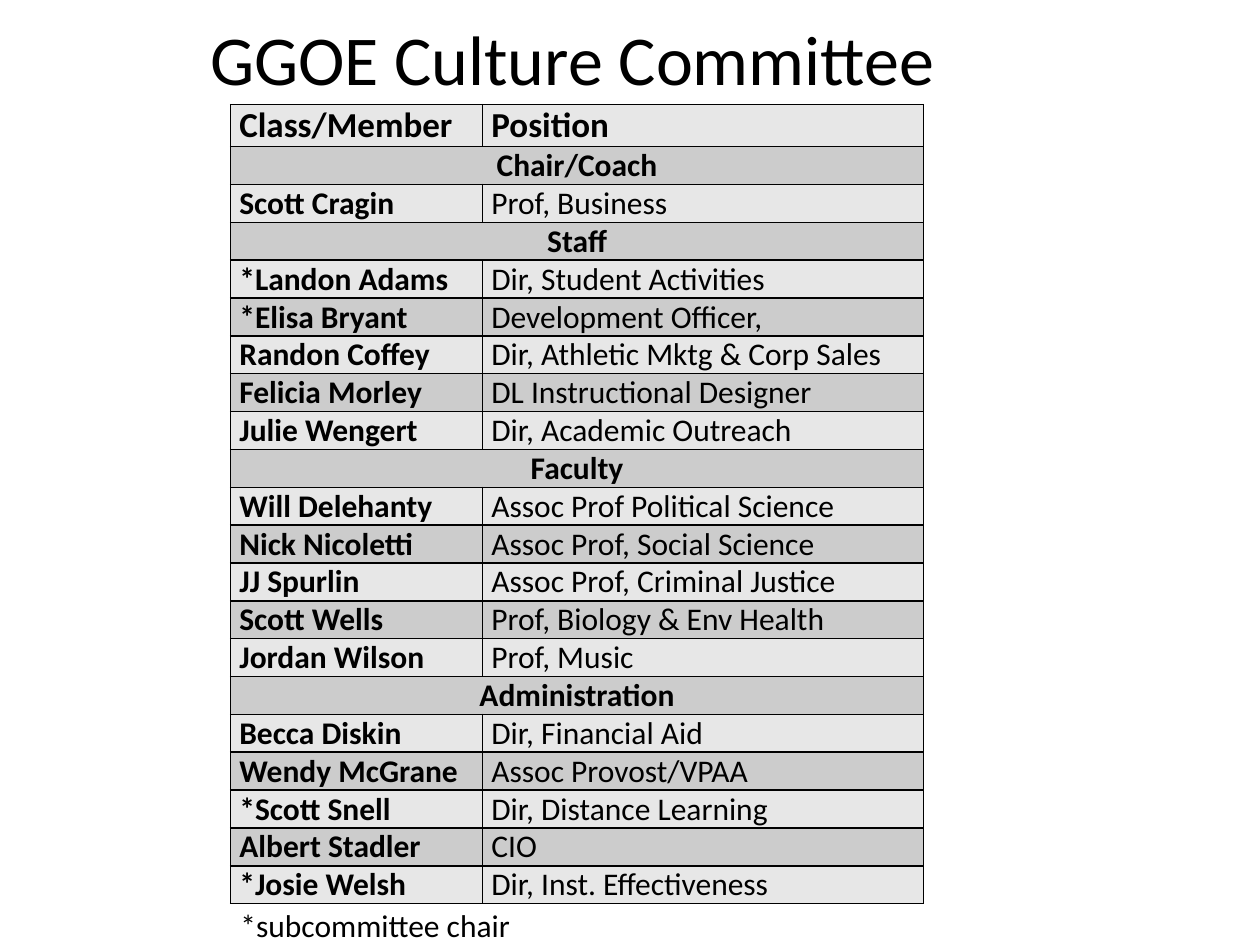
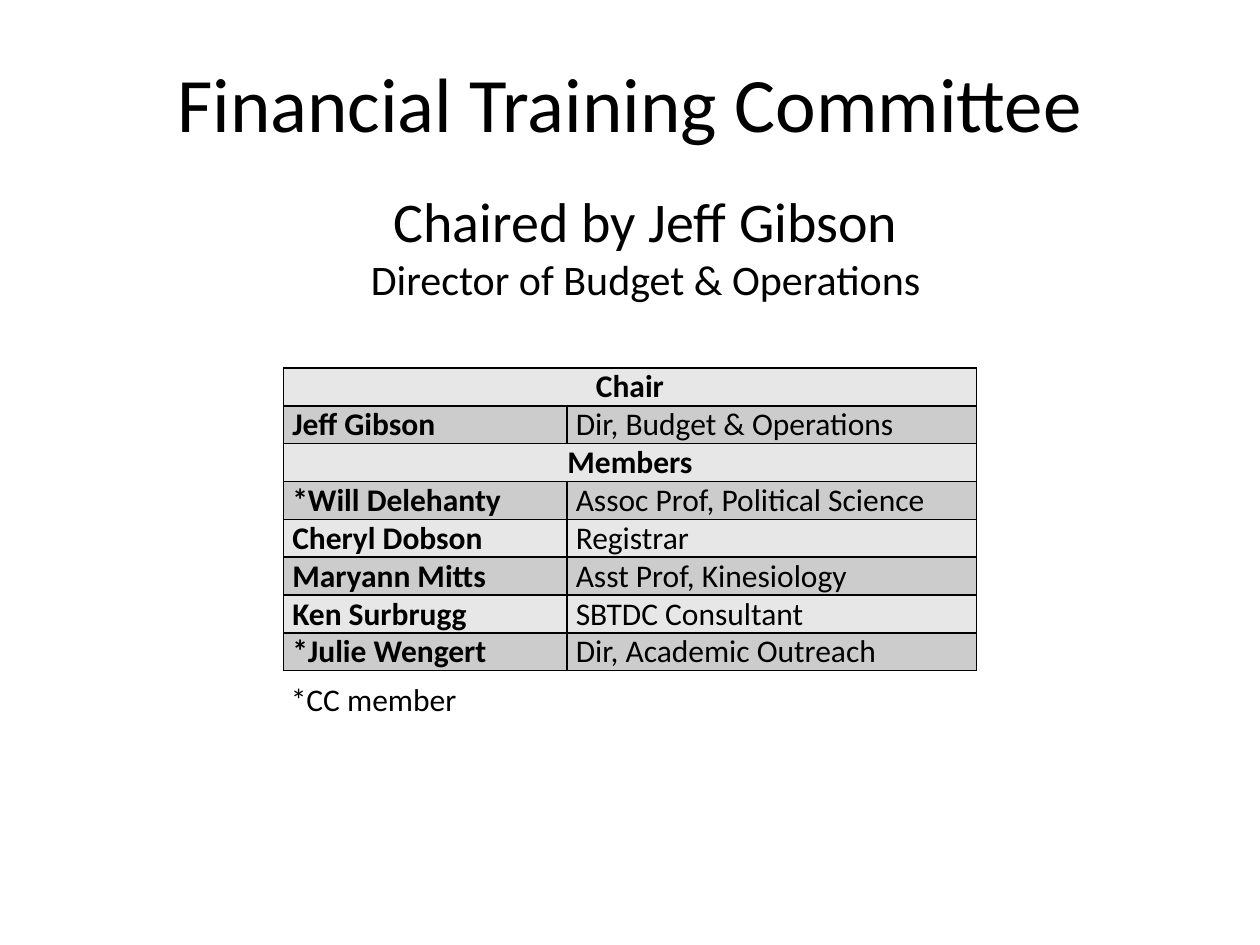
from dataclasses import dataclass

import pptx
import pptx.dml.color
import pptx.enum.text
import pptx.oxml
import pptx.oxml.ns
import pptx.util
from pptx.util import Inches

PP_ALIGN = pptx.enum.text.PP_ALIGN
ANCHOR = pptx.enum.text.MSO_ANCHOR


@dataclass(frozen=True)
class Theme:
    font: str = "Calibri"
    ink: str = "000000"
    bands: tuple[str, str] = ("E7E7E7", "CCCCCC")
    title: int = 44
    tight_title: int = 40
    subtitle: int = 32
    detail: int = 24
    column_head: int = 20
    body: int = 18
    border: float = 1


@dataclass(frozen=True)
class Box:
    left: float
    top: float
    width: float
    height: float

    def emu(self) -> tuple[int, ...]:
        return tuple(Inches(v) for v in (self.left, self.top, self.width, self.height))


@dataclass(frozen=True)
class Row:
    """A member with a position, or a full-width section heading without one."""
    label: str
    position: str = ""
    column_head: bool = False


@dataclass(frozen=True)
class Roster:
    left: float
    top: float
    columns: tuple[float, float]
    rows: list[Row]


THEME = Theme()
ROW_HEIGHT = 0.3
CELL_INSET = 0.07

CULTURE_ROWS = [
    Row("Class/Member", "Position", column_head=True),
    Row("Chair/Coach"),
    Row("Scott Cragin", "Prof, Business"),
    Row("Staff"),
    Row("*Landon Adams", "Dir, Student Activities"),
    Row("*Elisa Bryant", "Development Officer,"),
    Row("Randon Coffey", "Dir, Athletic Mktg & Corp Sales"),
    Row("Felicia Morley", "DL Instructional Designer"),
    Row("Julie Wengert", "Dir, Academic Outreach"),
    Row("Faculty"),
    Row("Will Delehanty", "Assoc Prof Political Science"),
    Row("Nick Nicoletti", "Assoc Prof, Social Science"),
    Row("JJ Spurlin", "Assoc Prof, Criminal Justice"),
    Row("Scott Wells", "Prof, Biology & Env Health"),
    Row("Jordan Wilson", "Prof, Music"),
    Row("Administration"),
    Row("Becca Diskin", "Dir, Financial Aid"),
    Row("Wendy McGrane", "Assoc Provost/VPAA"),
    Row("*Scott Snell", "Dir, Distance Learning"),
    Row("Albert Stadler", "CIO"),
    Row("*Josie Welsh", "Dir, Inst. Effectiveness"),
]

TRAINING_ROWS = [
    Row("Chair"),
    Row("Jeff Gibson", "Dir, Budget & Operations"),
    Row("Members"),
    Row("*Will Delehanty", "Assoc Prof, Political Science"),
    Row("Cheryl Dobson", "Registrar"),
    Row("Maryann Mitts", "Asst Prof, Kinesiology"),
    Row("Ken Surbrugg", "SBTDC Consultant"),
    Row("*Julie Wengert", "Dir, Academic Outreach"),
]


def rgb(value: str) -> pptx.dml.color.RGBColor:
    return pptx.dml.color.RGBColor.from_string(value)


def write(p, text: str, *, size: int = THEME.body, bold: bool = False,
          align: PP_ALIGN = PP_ALIGN.LEFT) -> None:
    p.alignment = align
    r = p.add_run()
    r.text = text
    r.font.name = THEME.font
    r.font.size = pptx.util.Pt(size)
    r.font.bold = bold
    r.font.color.rgb = rgb(THEME.ink)


def add_text(s, box: Box, lines: list[tuple[str, int]], *,
             align: PP_ALIGN = PP_ALIGN.LEFT, anchor: ANCHOR = ANCHOR.TOP) -> None:
    tf = s.shapes.add_textbox(*box.emu()).text_frame
    tf.word_wrap = True
    tf.vertical_anchor = anchor
    for i, (text, size) in enumerate(lines):
        p = tf.add_paragraph() if i else tf.paragraphs[0]
        write(p, text, size=size, align=align)


def add_title(s, text: str, box: Box, size: int) -> None:
    add_text(s, box, [(text, size)], align=PP_ALIGN.CENTER, anchor=ANCHOR.MIDDLE)


def style_cell(cell, fill: str) -> None:
    """Set insets, borders and fill; the borders must precede the fill in the XML."""
    cell.margin_left = cell.margin_right = Inches(CELL_INSET)
    cell.margin_top = cell.margin_bottom = 0
    tc_pr = cell._tc.get_or_add_tcPr()
    for side in "LRTB":
        tc_pr.append(pptx.oxml.parse_xml(
            f'<a:ln{side} {pptx.oxml.ns.nsdecls("a")} w="{pptx.util.Pt(THEME.border)}">'
            f'<a:solidFill><a:srgbClr val="{THEME.ink}"/></a:solidFill></a:ln{side}>'))
    cell.fill.solid()
    cell.fill.fore_color.rgb = rgb(fill)


def add_roster(s, roster: Roster) -> None:
    count = len(roster.rows)
    box = Box(roster.left, roster.top, sum(roster.columns), ROW_HEIGHT * count)
    table = s.shapes.add_table(count, 2, *box.emu()).table
    for column, width in zip(table.columns, roster.columns):
        column.width = Inches(width)
    for i, row in enumerate(roster.rows):
        table.rows[i].height = Inches(ROW_HEIGHT)
        label, position = table.cell(i, 0), table.cell(i, 1)
        for cell in (label, position):
            style_cell(cell, THEME.bands[i % 2])
        size = THEME.column_head if row.column_head else THEME.body
        align = PP_ALIGN.LEFT if row.position else PP_ALIGN.CENTER
        write(label.text_frame.paragraphs[0], row.label, size=size, bold=True, align=align)
        if row.position:
            write(position.text_frame.paragraphs[0], row.position, size=size,
                  bold=row.column_head)
        else:
            label.merge(position)


def add_footnote(s, text: str, left: float, top: float) -> None:
    add_text(s, Box(left, top, 2.83, 0.4), [(text, THEME.body)])


def culture_slide(s) -> None:
    add_title(s, "GGOE Culture Committee", Box(0.5, -0.17, 8.08, 1.25), THEME.tight_title)
    add_roster(s, Roster(1.83, 0.83, (2, 3.5), CULTURE_ROWS))
    add_footnote(s, "*subcommittee chair", 1.81, 7.14)


def training_slide(s) -> None:
    add_title(s, "Financial Training Committee", Box(0.5, 0.18, 9, 1.25), THEME.title)
    add_text(s, Box(0.5, 1.43, 9.25, 1.2),
             [("Chaired by Jeff Gibson", THEME.subtitle),
              ("Director of Budget & Operations", THEME.detail)],
             align=PP_ALIGN.CENTER)
    add_roster(s, Roster(2.25, 2.92, (2.25, 3.25), TRAINING_ROWS))
    add_footnote(s, "*CC member", 2.21, 5.35)


def main() -> None:
    prs = pptx.Presentation()
    prs.slide_width, prs.slide_height = Inches(10), Inches(7.5)
    for build in (culture_slide, training_slide):
        build(prs.slides.add_slide(prs.slide_layouts[6]))
    prs.save("out.pptx")


if __name__ == "__main__":
    main()
